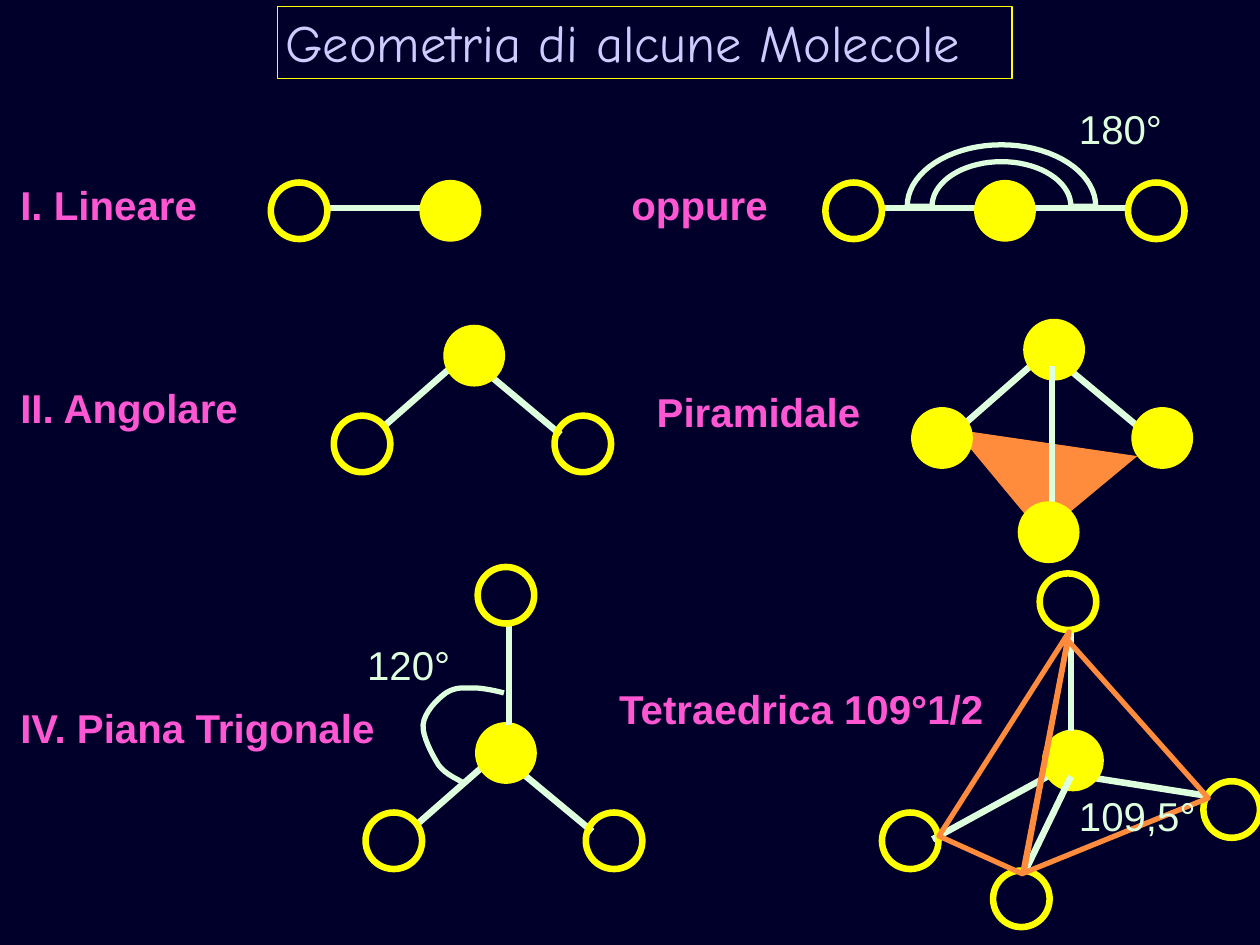
"""Build a slide showing the shapes of some simple molecules."""
from itertools import pairwise
from math import cos, pi, sin

from lxml.etree import SubElement
from pptx import Presentation
from pptx.dml.color import RGBColor
from pptx.enum.shapes import MSO_CONNECTOR as Link, MSO_SHAPE as Kind
from pptx.oxml.ns import qn
from pptx.util import Cm, Pt

NAVY = RGBColor(0x00, 0x00, 0x2A)
PINK = RGBColor(0xFF, 0x57, 0xD3)
MINT = RGBColor(0xDD, 0xFF, 0xDD)
GOLD = RGBColor(0xFF, 0xFF, 0x00)
RUST = RGBColor(0xFF, 0x8C, 0x3D)
LILAC = RGBColor(0xCC, 0xCC, 0xFF)

SIZE = 1.14
STEP = 3.05
TITLE = ("Geometria di alcune Molecole", 5.59, 0.13, 14.81)
NAMES = [
    ("I. Lineare", 0.25, 3.56, 4),
    ("oppure", 12.57, 3.56, 3.2),
    ("II. Angolare", 0.25, 7.65, 4.85),
    ("Piramidale", 13.08, 7.73, 4.55),
    ("IV. Piana Trigonale", 0.25, 14.1, 7.6),
    ("Tetraedrica 109°1/2", 12.32, 13.72, 7.8),
]
ANGLES = [
    ("180°", 21.59, 2.03, 2.1),
    ("120°", 7.24, 12.83, 2.1),
    ("109,5°", 21.59, 15.88, 2.8),
]
ROWS = [(5.46, ("ring", "ball")), (16.64, ("ring", "ball", "ring"))]
BENT = [
    ("bond", 7.72, 8.61, 9.75, 6.83),
    ("ring", 6.73, 8.38),
    ("bond", 9.78, 7.49, 11.3, 8.76),
    ("ring", 11.18, 8.38),
    ("ball", 8.99, 6.6),
]
PYRAMID = [
    ("bond", 19.05, 8.89, 21.08, 7.11),
    ("bond", 21.46, 7.37, 22.99, 8.64),
    ("ball", 22.86, 8.26),
    ("ball", 20.68, 6.48),
    ("base", 19.84, 7.54, 2.49, 2.77, 320.3),
    ("bond", 21.21, 7.37, 21.21, 10.29),
    ("ball", 20.57, 10.16),
    ("ball", 18.42, 8.26),
]
TRIGON = [
    ("bond", 8.38, 16.64, 10.41, 14.86),
    ("ring", 7.37, 16.38),
    ("bond", 10.41, 15.49, 11.94, 16.76),
    ("ring", 11.81, 16.38),
    ("ball", 9.63, 14.61),
    ("bond", 10.26, 14.61, 10.26, 12.57),
    ("ring", 9.63, 11.43),
]
TETRA = [
    ("bond", 18.8, 16.92, 21.54, 15.42),
    ("bond", 21.84, 15.65, 24.38, 16.05),
    ("ball", 21.06, 14.76),
    ("ring", 20.02, 17.55),
    ("bond", 21.59, 15.65, 20.68, 17.53),
    ("ring", 24.26, 15.75),
    ("ring", 17.78, 16.38),
    ("bond", 21.59, 14.73, 21.59, 12.7),
    ("ring", 20.96, 11.56),
    ("face", 19.84, 12.62, 1.85, 4.83, 24.3, 0.377),
    ("face", 19.74, 12.98, 4.01, 4.01, 337.9, 0.645),
]
CURVE = [
    (10.16, 13.97), (10.06, 13.94), (9.75, 13.87), (9.58, 13.87),
    (9.37, 13.87), (9.19, 13.84), (8.99, 13.97), (8.81, 14.1),
    (8.56, 14.35), (8.53, 14.61), (8.51, 14.83), (8.71, 15.21),
    (8.84, 15.42), (8.99, 15.62), (9.22, 15.7), (9.32, 15.77),
]


def style(shape, fill, line, width):
    shape.shadow.inherit = False
    if fill is None:
        shape.fill.background()
    else:
        shape.fill.solid()
        shape.fill.fore_color.rgb = fill
    if line is None:
        shape.line.fill.background()
    else:
        shape.line.color.rgb = line
        shape.line.width = Pt(width)


def ring(x, y, fill=None, width=3.75):
    dot = shapes.add_shape(Kind.OVAL, Cm(x), Cm(y), Cm(SIZE), Cm(SIZE))
    style(dot, fill, GOLD, width)


def ball(x, y):
    ring(x, y, GOLD, 3)


def bond(*ends):
    line = shapes.add_connector(Link.STRAIGHT, *map(Cm, ends))
    line.line.color.rgb = MINT
    line.line.width = Pt(3.75)
    SubElement(line._element.spPr, qn("a:effectLst"))


def base(x, y, wide, high, turn):
    side = shapes.add_shape(Kind.RIGHT_TRIANGLE, *map(Cm, (x, y, wide, high)))
    side.rotation = turn
    style(side, RUST, None, 0)


def face(x, y, wide, high, turn, peak):
    side = shapes.add_shape(Kind.ISOSCELES_TRIANGLE, *map(Cm, (x, y, wide, high)))
    side.rotation = turn
    side.adjustments[0] = peak
    style(side, None, RUST, 3)


def trace(points, close):
    spots = [(Cm(x), Cm(y)) for x, y in points]
    pen = shapes.build_freeform(*spots[0])
    pen.add_line_segments(spots[1:], close=close)
    style(pen.convert_to_shape(), None, MINT, 3)


def bezier(knots, count=8):
    points = [knots[0]]
    for i in range(0, len(knots) - 1, 3):
        for k in range(1, count + 1):
            t = k / count
            parts = ((1 - t) ** 3, 3 * t * (1 - t) ** 2, 3 * t * t * (1 - t), t ** 3)
            points.append(tuple(sum(p * knot[axis] for p, knot in zip(parts, knots[i:i + 4]))
                                for axis in (0, 1)))
    return points


def arch(wide, high, count=36):
    turns = [pi * k / count for k in range(count + 1)]
    return [(20.19 - wide * cos(t), 4.16 - high * sin(t)) for t in turns]


def label(words, x, y, wide, color, size=23, font="Arial", bold=False, high=SIZE):
    box = shapes.add_textbox(Cm(x), Cm(y), Cm(wide), Cm(high))
    frame = box.text_frame
    frame.word_wrap = False
    frame.margin_left = frame.margin_right = Cm(0.16)
    frame.margin_top = frame.margin_bottom = Cm(0.08)
    para = frame.paragraphs[0]
    para.text = words
    para.font.name, para.font.size, para.font.bold = font, Pt(size), bold
    para.font.color.rgb = color
    return box


deck = Presentation()
deck.slide_width, deck.slide_height = Cm(25.4), Cm(19.05)
slide = deck.slides.add_slide(deck.slide_layouts[6])
slide.background.fill.solid()
slide.background.fill.fore_color.rgb = NAVY
shapes = slide.shapes
draw = {"ring": ring, "ball": ball, "bond": bond, "base": base, "face": face}

for name in NAMES:
    label(*name, PINK, bold=True)
for start, kinds in ROWS:
    lefts = [start + STEP * i for i in range(len(kinds))]
    for left, right in pairwise(lefts):
        bond(left + SIZE, 4.19, right + 0.06, 4.19)
    for kind, left in zip(kinds, lefts):
        draw[kind](left, 3.68)
for part in BENT + PYRAMID + TRIGON + TETRA:
    draw[part[0]](*part[1:])
trace(bezier(CURVE), False)
trace(arch(1.4, 0.9) + arch(1.9, 1.24)[::-1], True)
for angle in ANGLES:
    label(*angle, MINT)
title = label(*TITLE, LILAC, 30, "Comic Neue", high=1.45)
title.line.color.rgb = GOLD
title.line.width = Pt(0.75)

deck.save("out.pptx")
